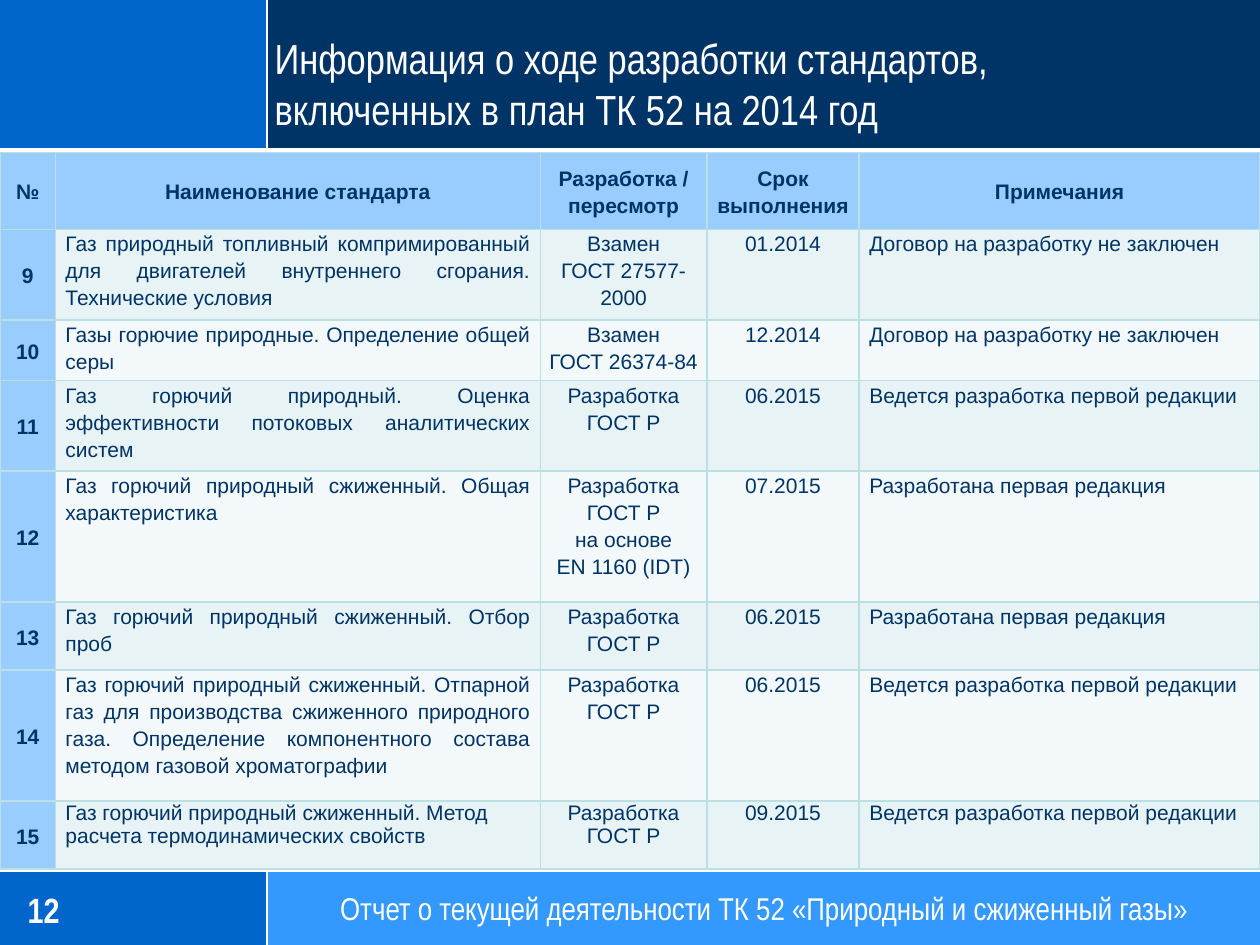
from lxml import etree
from pptx import Presentation
from pptx.dml.color import RGBColor
from pptx.enum.shapes import MSO_CONNECTOR, MSO_SHAPE
from pptx.enum.text import MSO_ANCHOR, PP_ALIGN
from pptx.oxml.ns import qn
from pptx.util import Inches, Pt

RECT = MSO_SHAPE.RECTANGLE
LINE = MSO_CONNECTOR.STRAIGHT
TOP, MID, BOTTOM = MSO_ANCHOR.TOP, MSO_ANCHOR.MIDDLE, MSO_ANCHOR.BOTTOM
LEFT, CENTER, JUST = PP_ALIGN.LEFT, PP_ALIGN.CENTER, PP_ALIGN.JUSTIFY

WHITE, NAVY, BLUE, SKY = "FFFFFF", "003366", "0066CC", "3399FF"
HEAD, ODD, EVEN, EDGE = "99CCFF", "E7F3F4", "F3F9FA", "BBE0E3"
NARROW = "Arial Narrow"
SPLIT, BAND, FOOT = 2.12, 1.18, 6.91

COLS = [0.44, 3.85, 1.32, 1.21, 3.18]
ALIGNS = [CENTER, JUST, CENTER, CENTER, LEFT]
PADS = [0.02, 0.08, 0.02, 0.02, 0.08]
HEIGHTS = [0.61, 0.72, 0.48, 0.72, 1.04, 0.54, 1.04, 0.54]
NEW = "Разработка ГОСТ Р"
NONE = "Договор на разработку не заключен"
DRAFT = "Ведется разработка первой редакции"
DONE = "Разработана первая редакция"
ROWS = [
    ("№", "Наименование стандарта", "Разработка / пересмотр",
     "Срок выполнения", "Примечания"),
    ("9", "Газ природный топливный компримированный для двигателей "
     "внутреннего сгорания. Технические условия",
     "Взамен\nГОСТ 27577-2000", "01.2014", NONE),
    ("10", "Газы горючие природные. Определение общей серы",
     "Взамен\nГОСТ 26374-84", "12.2014", NONE),
    ("11", "Газ горючий природный. Оценка эффективности потоковых "
     "аналитических систем", NEW, "06.2015", DRAFT),
    ("12", "Газ горючий природный сжиженный. Общая характеристика",
     NEW + "\nна основе\nEN 1160 (IDT)", "07.2015", DONE),
    ("13", "Газ горючий природный сжиженный. Отбор проб",
     NEW, "06.2015", DONE),
    ("14", "Газ горючий природный сжиженный. Отпарной газ для производства "
     "сжиженного природного газа. Определение компонентного состава "
     "методом газовой хроматографии", NEW, "06.2015", DRAFT),
    ("15", "Газ горючий природный сжиженный. Метод расчета "
     "термодинамических свойств", NEW, "09.2015", DRAFT),
]


def color(code):
    """Turn a hex string into a colour."""
    return RGBColor.from_string(code)


def write(frame, text, size=12, font="Arial", ink=NAVY, bold=False,
          align=LEFT, space=1.0):
    """Fill a text frame, one paragraph for each line of text."""
    frame.word_wrap = True
    for i, line in enumerate(text.split("\n")):
        para = frame.add_paragraph() if i else frame.paragraphs[0]
        para.alignment = align
        para.line_spacing = space
        run = para.add_run()
        run.text = line
        run.font.size = Pt(size)
        run.font.name = font
        run.font.bold = bold
        run.font.color.rgb = color(ink)


def add_band(slide, x, y, w, h, fill):
    """Add a plain filled rectangle."""
    shape = slide.shapes.add_shape(
        RECT, Inches(x), Inches(y), Inches(w), Inches(h))
    shape.shadow.inherit = False
    shape.fill.solid()
    shape.fill.fore_color.rgb = color(fill)
    shape.line.fill.background()


def add_rule(slide, x1, y1, x2, y2):
    """Add a thin white line."""
    rule = slide.shapes.add_connector(
        LINE, Inches(x1), Inches(y1), Inches(x2), Inches(y2))
    rule.line.color.rgb = color(WHITE)
    rule.line.width = Pt(1.25)
    etree.SubElement(rule._element.spPr, qn("a:effectLst"))


def add_text(slide, x, y, w, h, text, anchor=MID, **style):
    """Add a text box without margins."""
    box = slide.shapes.add_textbox(
        Inches(x), Inches(y), Inches(w), Inches(h))
    frame = box.text_frame
    frame.margin_left = frame.margin_right = 0
    frame.margin_top = frame.margin_bottom = 0
    frame.vertical_anchor = anchor
    write(frame, text, font=NARROW, ink=WHITE, **style)


def set_edges(cell):
    """Draw the four borders of a cell."""
    props = cell._tc.get_or_add_tcPr()
    for i, side in enumerate(("lnL", "lnR", "lnT", "lnB")):
        edge = etree.Element(qn("a:" + side), w=str(Pt(1)))
        fill = etree.SubElement(edge, qn("a:solidFill"))
        etree.SubElement(fill, qn("a:srgbClr"), val=EDGE)
        props.insert(i, edge)


def set_cell(cell, text, row, col):
    """Style and fill a cell by its place in the table."""
    head = row == 0 or col == 0
    cell.margin_left = cell.margin_right = Inches(PADS[col])
    cell.margin_top = cell.margin_bottom = 0
    cell.vertical_anchor = MID if head else TOP
    cell.fill.solid()
    cell.fill.fore_color.rgb = color(HEAD if head else ODD if row % 2 else EVEN)
    set_edges(cell)
    last = row == len(ROWS) - 1
    align = CENTER if head else LEFT if last and col == 1 else ALIGNS[col]
    write(cell.text_frame, text, bold=head, align=align,
          space=1.0 if last and not head else 1.15)


def add_grid(slide, x, y):
    """Add the table of standards."""
    table = slide.shapes.add_table(
        len(ROWS), len(COLS), Inches(x), Inches(y),
        Inches(sum(COLS)), Inches(sum(HEIGHTS))).table
    for col, width in zip(table.columns, COLS):
        col.width = Inches(width)
    for r, (height, texts) in enumerate(zip(HEIGHTS, ROWS)):
        table.rows[r].height = Inches(height)
        for c, text in enumerate(texts):
            set_cell(table.cell(r, c), text, r, c)


def main():
    """Build the slide and save it."""
    deck = Presentation()
    deck.slide_width, deck.slide_height = Inches(10), Inches(7.5)
    slide = deck.slides.add_slide(deck.slide_layouts[6])
    for y, h, fill in ((FOOT, 0.59, SKY), (0, BAND, NAVY)):
        add_band(slide, 0, y, SPLIT, h, BLUE)
        add_band(slide, SPLIT, y, 10 - SPLIT, h, fill)
        add_rule(slide, SPLIT, y, SPLIT, y + h)
    for y in (FOOT, BAND):
        add_rule(slide, 0, y, 10, y)
    add_text(slide, 2.18, 0.13, 7.81, 0.93,
             "Информация о ходе разработки стандартов,\n"
             "включенных в план ТК 52 на 2014 год", anchor=BOTTOM, size=24)
    add_text(slide, 0.22, 6.96, 1.63, 0.52, "12", size=20, bold=True)
    add_text(slide, 2.13, FOOT, 7.87, 0.59,
             "Отчет о текущей деятельности ТК 52 «Природный и сжиженный газы»",
             size=18, align=CENTER)
    add_grid(slide, 0, 1.21)
    deck.save("out.pptx")


if __name__ == "__main__":
    main()
